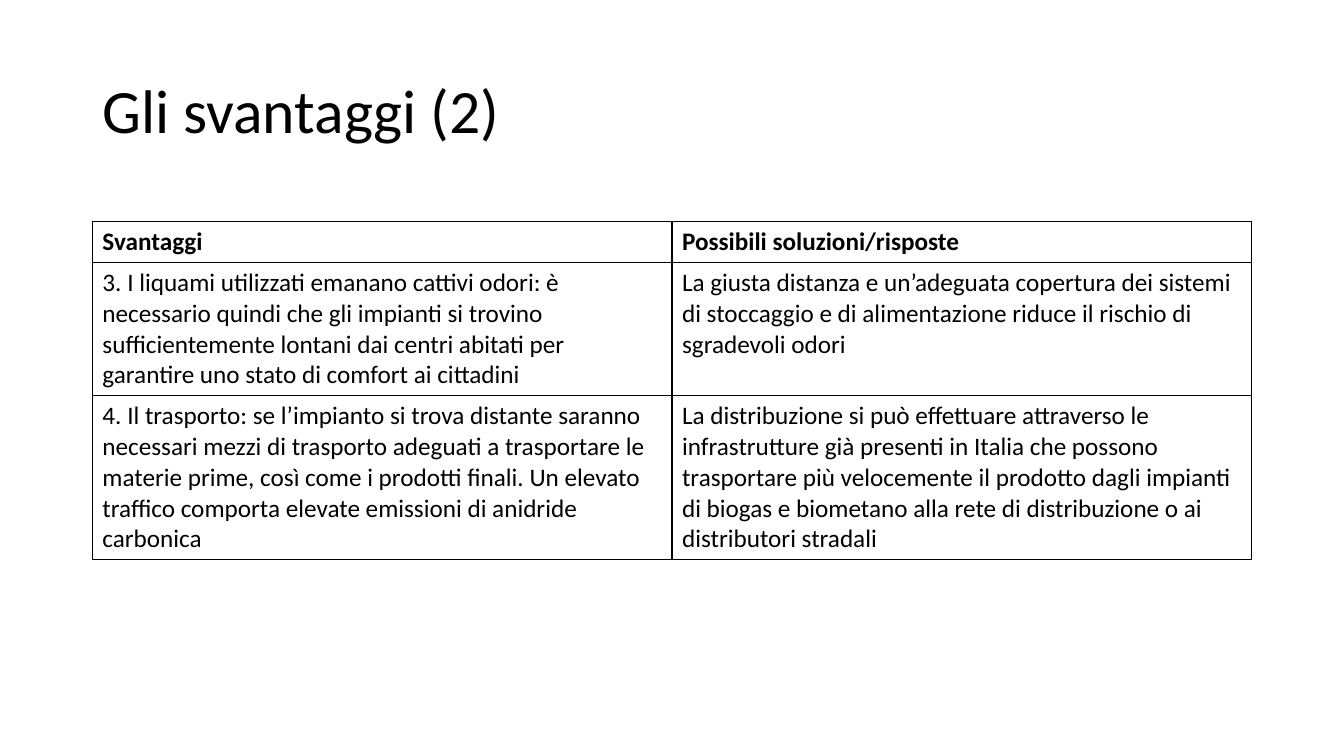
from dataclasses import dataclass

from lxml import etree
from pptx import Presentation
from pptx.dml.color import RGBColor
from pptx.enum.text import MSO_ANCHOR, MSO_AUTO_SIZE, PP_ALIGN
from pptx.oxml.ns import qn
from pptx.util import Pt

LEFT = PP_ALIGN.LEFT
MIDDLE = MSO_ANCHOR.MIDDLE
NO_AUTOFIT = MSO_AUTO_SIZE.NONE
BLACK = RGBColor(0x00, 0x00, 0x00)
FONT = "Calibri"
MARGIN, WIDTH = 66, 828
TABLE_TOP = 158.4
BORDER_WIDTH = 1


@dataclass
class Row:
    drawback: str
    answer: str
    height: float
    bold: bool = False


ROWS = [
    Row("Svantaggi", "Possibili soluzioni/risposte", 29.2, bold=True),
    Row(
        "3. I liquami utilizzati emanano cattivi odori: è necessario quindi che "
        "gli impianti si trovino sufficientemente lontani dai centri abitati per "
        "garantire uno stato di comfort ai cittadini",
        "La giusta distanza e un’adeguata copertura dei sistemi di stoccaggio e "
        "di alimentazione riduce il rischio di sgradevoli odori",
        94.5,
    ),
    Row(
        "4. Il trasporto: se l’impianto si trova distante saranno necessari mezzi "
        "di trasporto adeguati a trasportare le materie prime, così come i "
        "prodotti finali. Un elevato traffico comporta elevate emissioni di "
        "anidride carbonica",
        "La distribuzione si può effettuare attraverso le infrastrutture già "
        "presenti in Italia che possono trasportare più velocemente il prodotto "
        "dagli impianti di biogas e biometano alla rete di distribuzione o ai "
        "distributori stradali",
        114.6,
    ),
]


def write(tf, text: str, *, size: float, bold: bool = False,
          spacing: float = 1.0) -> None:
    p = tf.paragraphs[0]
    p.alignment = LEFT
    p.line_spacing = spacing
    r = p.add_run()
    r.text = text
    r.font.name = FONT
    r.font.size = Pt(size)
    r.font.bold = bold
    r.font.color.rgb = BLACK


def add_borders(cell) -> None:
    tc_pr = cell._tc.get_or_add_tcPr()
    for i, side in enumerate(("lnL", "lnR", "lnT", "lnB")):
        ln = etree.Element(qn(f"a:{side}"), w=str(Pt(BORDER_WIDTH)))
        fill = etree.SubElement(ln, qn("a:solidFill"))
        etree.SubElement(fill, qn("a:srgbClr"), val=str(BLACK))
        tc_pr.insert(i, ln)


def add_title(s, text: str) -> None:
    sp = s.shapes.title
    sp.left, sp.top = Pt(MARGIN), Pt(28.8)
    sp.width, sp.height = Pt(WIDTH), Pt(104.4)
    tf = sp.text_frame
    tf.auto_size = NO_AUTOFIT
    tf.vertical_anchor = MIDDLE
    write(tf, text, size=44, spacing=0.9)


def add_comparison(s, rows: list[Row]) -> None:
    height = sum(row.height for row in rows)
    table = s.shapes.add_table(len(rows), 2, Pt(MARGIN), Pt(TABLE_TOP),
                               Pt(WIDTH), Pt(height)).table
    table.horz_banding = False
    for i, row in enumerate(rows):
        table.rows[i].height = Pt(row.height)
        for j, text in enumerate((row.drawback, row.answer)):
            cell = table.cell(i, j)
            cell.fill.background()
            add_borders(cell)
            write(cell.text_frame, text, size=18, bold=row.bold)


def main() -> None:
    prs = Presentation()
    prs.slide_width, prs.slide_height = Pt(960), Pt(540)
    s = prs.slides.add_slide(prs.slide_layouts[5])
    add_title(s, "Gli svantaggi (2)")
    add_comparison(s, ROWS)
    prs.save("out.pptx")


if __name__ == "__main__":
    main()
